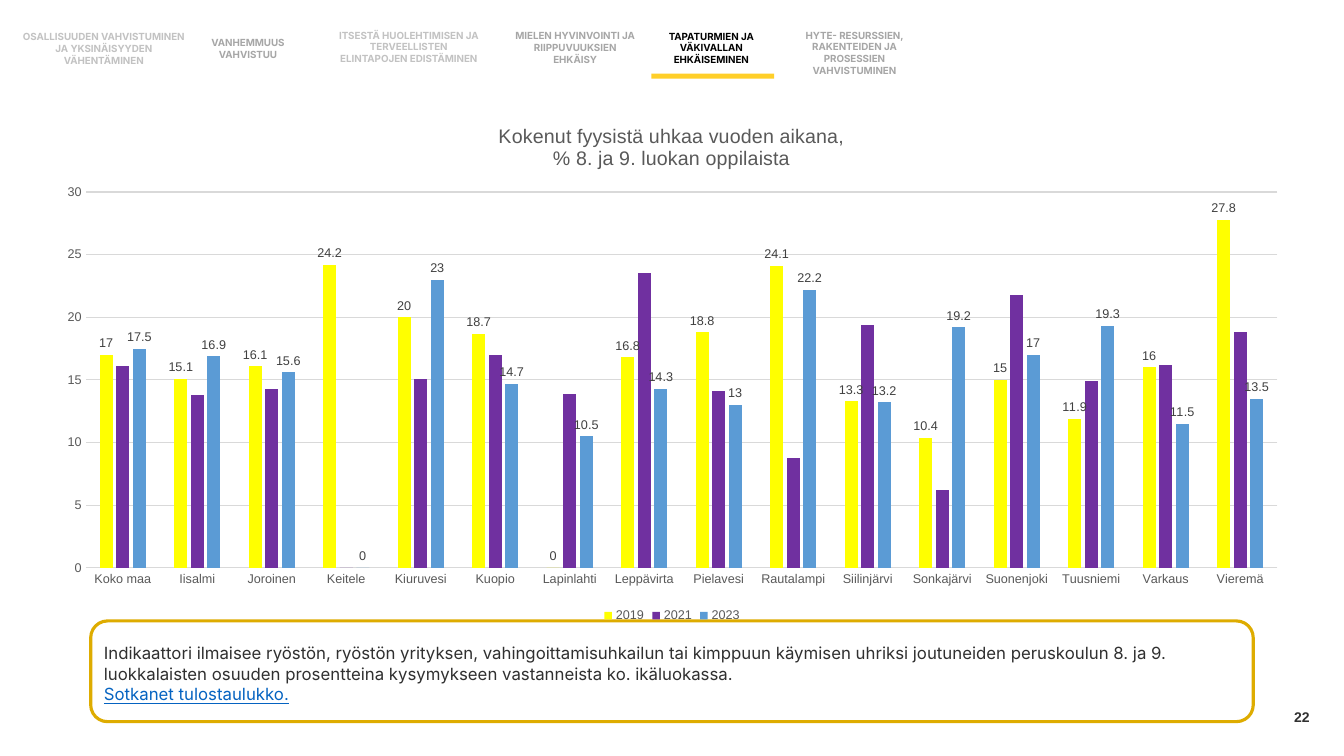
from lxml import etree
from pptx import Presentation
from pptx import util as u
from pptx.chart import data as cd
from pptx.dml import color
from pptx.enum import chart as ch, shapes, text
from pptx.oxml import ns

COLORS = {
    "number": "313131", "frame": "DEAC00", "bar": "FFCF29", "body": "303030",
    "link": "0563C1", "pale": "C2C2C2", "grey": "A6A6A6", "active": "000000",
    "axis": "595959", "grid": "D9D9D9", "label": "404040",
    "2019": "FFFF00", "2021": "7030A0", "2023": "5B9BD5",
}
PLACES = ["Koko maa", "Iisalmi", "Joroinen", "Keitele", "Kiuruvesi", "Kuopio",
          "Lapinlahti", "Leppävirta", "Pielavesi", "Rautalampi", "Siilinjärvi",
          "Sonkajärvi", "Suonenjoki", "Tuusniemi", "Varkaus", "Vieremä"]
THREATS = {
    "2019": [17, 15.1, 16.1, 24.2, 20, 18.7, 0, 16.8, 18.8, 24.1, 13.3, 10.4, 15, 11.9, 16, 27.8],
    "2021": [16.1, 13.8, 14.3, 0, 15.1, 17, 13.9, 23.5, 14.1, 8.8, 19.4, 6.2, 21.8, 14.9, 16.2, 18.8],
    "2023": [17.5, 16.9, 15.6, 0, 23, 14.7, 10.5, 14.3, 13, 22.2, 13.2, 19.2, 17, 19.3, 11.5, 13.5],
}
LABELLED = ("2019", "2023")
TITLE = ["Kokenut fyysistä uhkaa vuoden aikana,", "% 8. ja 9. luokan oppilaista"]
BODY = ("Indikaattori ilmaisee ryöstön, ryöstön yrityksen, vahingoittamisuhkailun tai "
        "kimppuun käymisen uhriksi joutuneiden peruskoulun 8. ja 9. luokkalaisten "
        "osuuden prosentteina kysymykseen vastanneista ko. ikäluokassa.")
NAV = [
    ((1.65, 4.8, 12.15, 3.2), "pale", ["OSALLISUUDEN VAHVISTUMINEN JA YKSINÄISYYDEN VÄHENTÄMINEN"]),
    ((13.88, 5.6, 9.15, 1.6), "grey", ["VANHEMMUUS VAHVISTUU"]),
    ((25.13, 3.87, 10.58, 4.67), "pale", ["ITSESTÄ HUOLEHTIMISEN JA TERVEELLISTEN ELINTAPOJEN EDISTÄMINEN"]),
    ((38.03, 4.67, 9.53, 3.2), "grey", ["MIELEN HYVINVOINTI JA RIIPPUVUUKSIEN EHKÄISY"]),
    ((48.16, 4, 9.53, 4.67), "active", ["TAPATURMIEN JA VÄKIVALLAN EHKÄISEMINEN"]),
    ((58.29, 4.67, 10.58, 4.67), "grey", ["HYTE- RESURSSIEN, RAKENTEIDEN JA PROSESSIEN", "VAHVISTUMINEN"]),
]


class Deck:
    """Holds the style and current slide; boxes are percentages of the slide's size."""

    def __init__(self):
        self.prs = Presentation()
        self.prs.slide_width, self.prs.slide_height = u.Inches(13.33), u.Inches(7.5)
        self.slide = self.prs.slides.add_slide(self.prs.slide_layouts[6])

    def place(self, box):
        sides = (self.prs.slide_width, self.prs.slide_height) * 2
        return [u.Emu(round(share * side / 100)) for share, side in zip(box, sides)]

    def rgb(self, name):
        return color.RGBColor.from_string(COLORS[name])

    def font(self, f, size, name, face="Arial", bold=False):
        f.size, f.name, f.bold = u.Pt(size), face, bold
        f.color.rgb = self.rgb(name)

    def text(self, box, lines, size, name, face="Inter", bold=False,
             align=text.PP_ALIGN.CENTER, anchor=text.MSO_ANCHOR.MIDDLE):
        tf = self.slide.shapes.add_textbox(*self.place(box)).text_frame
        tf.word_wrap, tf.vertical_anchor = True, anchor
        tf.margin_left = tf.margin_top = tf.margin_right = tf.margin_bottom = 0
        tf.text = "\n".join(lines)
        for p in tf.paragraphs:
            p.alignment = align
            self.font(p.font, size, name, face, bold)
        return tf

    def shape(self, kind, box, fill=None, line=None):
        sp = self.slide.shapes.add_shape(kind, *self.place(box))
        sp.shadow.inherit = False
        if fill:
            sp.fill.solid()
            sp.fill.fore_color.rgb = self.rgb(fill)
        else:
            sp.fill.background()
        if line:
            sp.line.color.rgb, sp.line.width = self.rgb(line), u.Pt(2.25)
        else:
            sp.line.fill.background()

    def layout(self, parent, **settings):
        for old in parent.findall(ns.qn("c:layout")):
            parent.remove(old)
        layout = etree.Element(ns.qn("c:layout"))
        manual = etree.SubElement(layout, ns.qn("c:manualLayout"))
        for tag, val in settings.items():
            etree.SubElement(manual, ns.qn("c:" + tag)).set("val", str(val))
        return layout

    def chart(self, box):
        data = cd.CategoryChartData()
        data.categories = PLACES
        for year, values in THREATS.items():
            data.add_series(year, values)
        chart = self.slide.shapes.add_chart(
            ch.XL_CHART_TYPE.COLUMN_CLUSTERED, *self.place(box), data).chart
        self.font(chart.font, 10, "active")
        self.title(chart)
        self.axes(chart)
        chart.has_legend = True
        chart.legend.position = ch.XL_LEGEND_POSITION.BOTTOM
        chart.legend.include_in_layout = False
        self.font(chart.legend.font, 9, "axis")
        plot = chart.plots[0]
        plot.gap_width, plot.overlap, plot.vary_by_categories = 219, -27, False
        for series in plot.series:
            series.format.fill.solid()
            series.format.fill.fore_color.rgb = self.rgb(series.name)
            series.invert_if_negative = False
            if series.name in LABELLED:
                labels = series.data_labels
                labels.show_value = True
                labels.position = ch.XL_LABEL_POSITION.OUTSIDE_END
                self.font(labels.font, 9, "label")

    def title(self, chart):
        chart.has_title = True
        tf = chart.chart_title.text_frame
        tf.text = "\n".join(TITLE)
        for p in tf.paragraphs:
            self.font(p.font, 14, "axis")
        title = chart.chart_title._element
        title.find(ns.qn("c:tx")).addnext(
            self.layout(title, xMode="edge", yMode="edge", x=0.36, y=0.03))

    def axes(self, chart):
        for axis in (chart.category_axis, chart.value_axis):
            axis.major_tick_mark = axis.minor_tick_mark = ch.XL_TICK_MARK.NONE
            self.font(axis.tick_labels.font, 9, "axis")
        values = chart.value_axis
        values.minimum_scale, values.maximum_scale, values.major_unit = 0, 30, 5
        values.format.line.fill.background()
        values.has_major_gridlines = True
        for line in (chart.category_axis.format.line, values.major_gridlines.format.line):
            line.color.rgb, line.width = self.rgb("grid"), u.Pt(0.75)
        area = chart._chartSpace.chart.plotArea
        area.insert(0, self.layout(area, layoutTarget="inner", xMode="edge", yMode="edge",
                                   x=0.035, y=0.167, w=0.945, h=0.72))


def main():
    deck = Deck()
    deck.text((74.94, 92.13, 22.51, 5.33), ["22"], 10, "number", "Arial", True, text.PP_ALIGN.RIGHT)
    deck.shape(shapes.MSO_SHAPE.ROUNDED_RECTANGLE, (6.75, 82.13, 86.5, 13.33), line="frame")
    deck.chart((3.08, 13.87, 93.85, 69.07))
    tf = deck.text((7.73, 85.07, 84.62, 8.13), [BODY, "Sotkanet tulostaulukko."], 12, "body",
                   align=text.PP_ALIGN.LEFT, anchor=text.MSO_ANCHOR.TOP)
    link = tf.paragraphs[1].font
    link.color.rgb, link.underline = deck.rgb("link"), True
    for box, name, lines in NAV:
        deck.text(box, lines, 7, name, bold=True)
    deck.shape(shapes.MSO_SHAPE.RECTANGLE, (48.46, 9.73, 9.15, 0.67), fill="bar")
    deck.prs.save("out.pptx")


if __name__ == "__main__":
    main()
